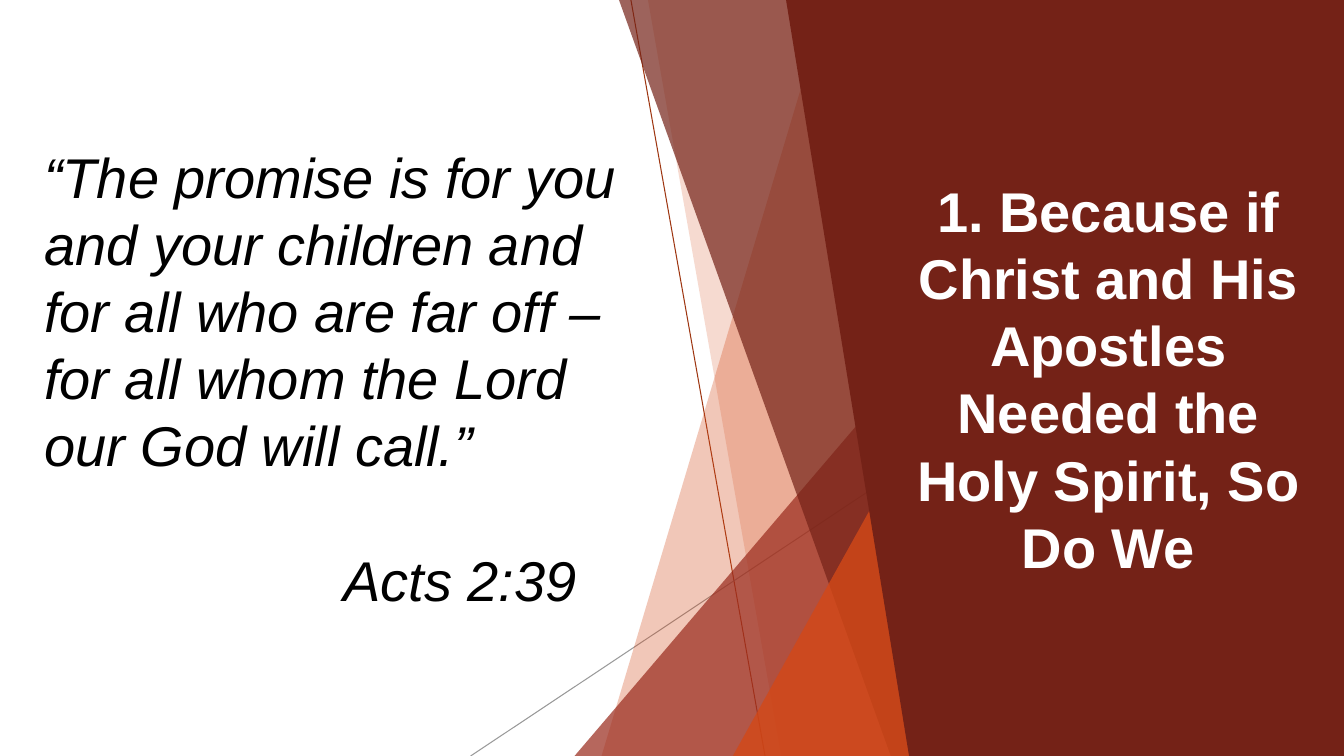
"""Build a scripture slide with translucent facets and a dark title panel."""
from lxml import etree
from pptx import Presentation
from pptx import util as u
from pptx.dml import color
from pptx.enum import shapes, text
from pptx.oxml import ns

QUOTE = ("“The promise is for you and your children and for all who are far off "
         "– for all whom the Lord our God will call.”")
REFERENCE = "Acts 2:39"
POINT = "1. Because if Christ and His Apostles Needed the Holy Spirit, So Do We"

THEME = {
    "font": "Arial", "size": u.Pt(40), "leading": u.Pt(48), "hairline": u.Pt(0.75),
    "ink": "000000", "light": "FFFFFF", "brick": "742217", "red": "9B2D1F",
    "orange": "D34817", "rust": "9E3611", "grey": "808080",
}
WIDTH, HEIGHT = 33.87, 19.05
FACET_EDGE = 23.52

RAYS = [
    ((15.9, 0), (19.28, HEIGHT), "rust", 100),
    ((25.1, 10.24), (11.86, HEIGHT), "grey", 80),
]
FACETS = [
    ("band", 20.85, 15.16, "orange", 30),
    ("band", 16.33, 19.69, "orange", 20),
    ("triangle", 14.48, 8.46, "red", 72),
    ("band", 15.6, 22.45, "brick", 70),
    ("triangle", 18.47, 9.98, "orange", 80),
]
PANEL = (19.81, 22.91)
QUOTE_BOX = dict(left=0.86, top=3.53, width=15.04, height=11.96)
POINT_BOX = dict(left=22.28, top=8.0, width=11.3, height=3.05)
REFERENCE_INDENT = u.Cm(7.54)


def assign(target, **values):
    for name, value in values.items():
        setattr(target, name, value)


def tint(fill, name, opacity=100):
    fill.solid()
    fill.fore_color.rgb = color.RGBColor.from_string(THEME[name])
    if opacity < 100:
        rgb = fill._xPr.find(".//" + ns.qn("a:srgbClr"))
        etree.SubElement(rgb, ns.qn("a:alpha"), val=str(opacity * 1000))


def finish(shape, name, opacity=100):
    shape.shadow.inherit = False
    tint(shape.fill, name, opacity)
    shape.line.fill.background()


def add_band(canvas, top_left, bottom_left, right):
    corners = [(right, 0), (right, HEIGHT), (bottom_left, HEIGHT)]
    outline = canvas.build_freeform(u.Cm(top_left), 0)
    outline.add_line_segments([(u.Cm(x), u.Cm(y)) for x, y in corners])
    return outline.convert_to_shape()


def add_triangle(canvas, left, top, right):
    box = [u.Cm(v) for v in (left, top, right - left, HEIGHT - top)]
    triangle = canvas.add_shape(shapes.MSO_SHAPE.ISOSCELES_TRIANGLE, *box)
    triangle.adjustments[0] = 1
    return triangle


def add_ray(canvas, start, end, name, opacity):
    ends = [u.Cm(v) for v in start + end]
    ray = canvas.add_connector(shapes.MSO_CONNECTOR.STRAIGHT, *ends)
    ray.line.width = THEME["hairline"]
    tint(ray.line.fill, name, opacity)
    etree.SubElement(ray.element.spPr, ns.qn("a:effectLst"))


def write(box, place, lines, align, ink, **style):
    assign(box, **{side: u.Cm(value) for side, value in place.items()})
    frame = box.text_frame
    assign(frame, word_wrap=True, auto_size=text.MSO_AUTO_SIZE.NONE,
           vertical_anchor=text.MSO_ANCHOR.MIDDLE)
    frame.text = "\n".join(lines)
    for para in frame.paragraphs:
        assign(para, alignment=align, line_spacing=THEME["leading"],
               space_before=u.Pt(0), space_after=u.Pt(0))
        for span in para.runs:
            assign(span.font, name=THEME["font"], size=THEME["size"], **style)
            tint(span.font.fill, ink)
    return frame.paragraphs


def main():
    deck = Presentation()
    assign(deck, slide_width=u.Cm(WIDTH), slide_height=u.Cm(HEIGHT))
    page = deck.slides.add_slide(deck.slide_layouts[0])
    tint(page.background.fill, "light")
    title, subtitle = page.placeholders

    canvas = page.shapes.add_group_shape().shapes
    for ray in RAYS:
        add_ray(canvas, *ray)
    draw = {"band": add_band, "triangle": add_triangle}
    for kind, first, second, name, opacity in FACETS:
        finish(draw[kind](canvas, first, second, FACET_EDGE), name, opacity)

    page.shapes.element.append(title.element)
    finish(add_band(page.shapes, *PANEL, WIDTH), "brick")
    page.shapes.element.append(subtitle.element)

    quote, reference = write(title, QUOTE_BOX, [QUOTE, REFERENCE],
                             text.PP_ALIGN.LEFT, "ink", italic=True, bold=False)
    reference.space_before = THEME["leading"]
    reference._p.get_or_add_pPr().set("marL", str(REFERENCE_INDENT))
    write(subtitle, POINT_BOX, [POINT], text.PP_ALIGN.CENTER, "light", bold=True)
    deck.save("out.pptx")


if __name__ == "__main__":
    main()
